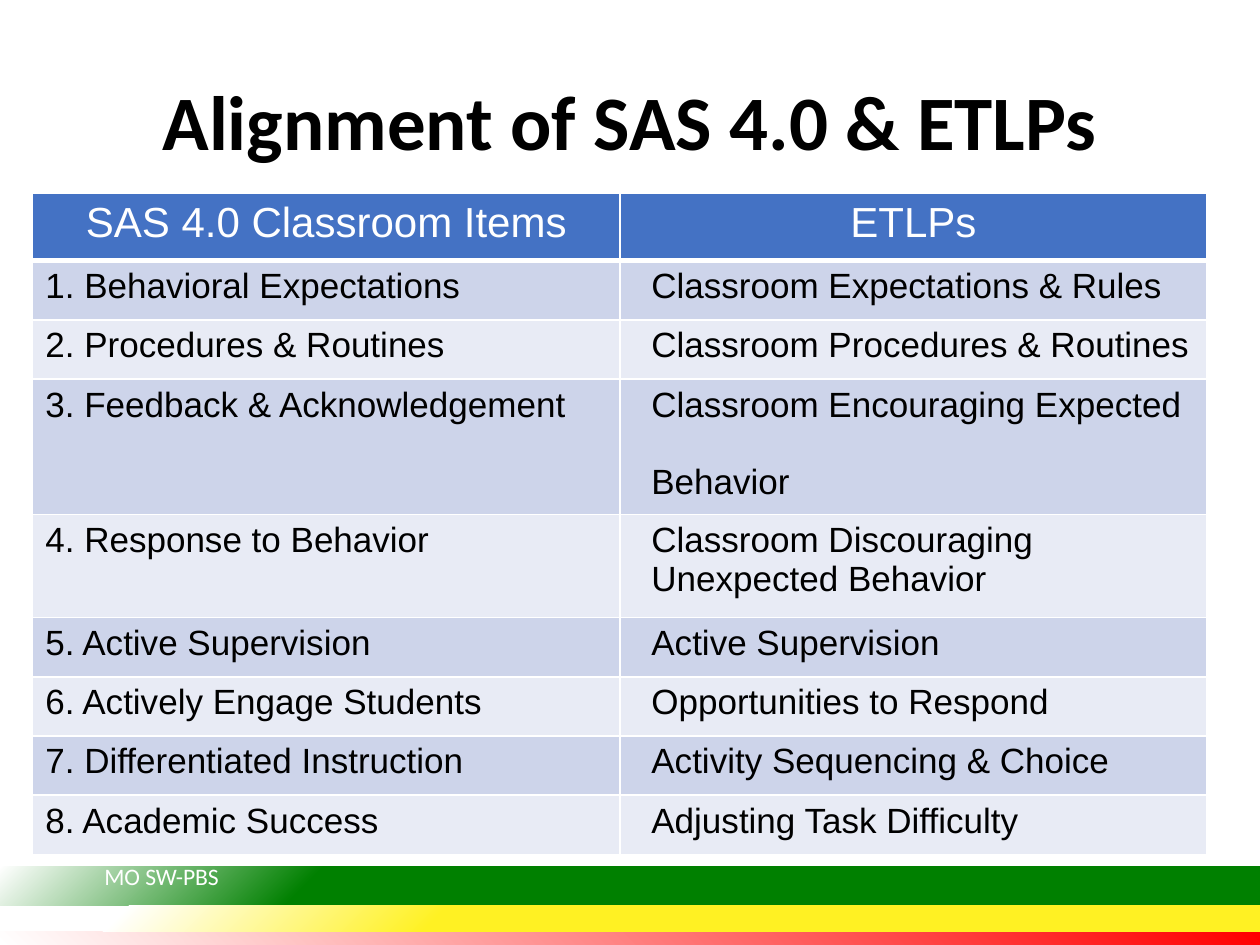
from lxml import etree
from pptx import Presentation
from pptx import util as u
from pptx.dml.color import RGBColor
from pptx.enum import shapes, text
from pptx.oxml import parse_xml
from pptx.oxml.ns import nsdecls, qn

WHITE, BLACK = "FFFFFF", "000000"
HEADER_FILL = "4472C4"
BAND_FILLS = ("CDD4EA", "E8EBF5")


def color(value):
    return RGBColor.from_string(value)


class SlideBuilder:
    heading_font = "Calibri"
    table_font = "Arial"

    def __init__(self, slide):
        self.slide = slide

    def style(self, paragraph, name, size, value, bold=False):
        font = paragraph.font
        font.name, font.size, font.bold = name, u.Pt(size), bold
        font.color.rgb = color(value)

    def title(self, words, left, top, width, height):
        shape = self.slide.shapes.title
        shape.left, shape.top = u.Inches(left), u.Inches(top)
        shape.width, shape.height = u.Inches(width), u.Inches(height)
        shape.text_frame.text = words
        shape.text_frame.vertical_anchor = text.MSO_ANCHOR.MIDDLE
        paragraph = shape.text_frame.paragraphs[0]
        paragraph.alignment = text.PP_ALIGN.CENTER
        paragraph.line_spacing = 0.9
        self.style(paragraph, self.heading_font, 44, BLACK, bold=True)

    def band(self, top, height, stops, focus):
        """Full-width strip with a circular gradient growing from one corner."""
        shape = self.slide.shapes.add_shape(
            shapes.MSO_SHAPE.RECTANGLE, 0, u.Inches(top), u.Inches(10), u.Inches(height))
        shape.shadow.inherit = False
        shape.line.fill.background()
        stop_xml = "".join(
            f'<a:gs pos="{position * 1000}"><a:srgbClr val="{value}"/></a:gs>'
            for position, value in stops)
        gradient = parse_xml(
            f'<a:gradFill {nsdecls("a")} rotWithShape="1"><a:gsLst>{stop_xml}</a:gsLst>'
            f'<a:path path="circle"><a:fillToRect {focus}/></a:path></a:gradFill>')
        shape.element.spPr.find(qn("a:prstGeom")).addnext(gradient)

    def label(self, words, left, top, width, height):
        shape = self.slide.shapes.add_textbox(
            u.Inches(left), u.Inches(top), u.Inches(width), u.Inches(height))
        shape.text_frame.word_wrap = True
        shape.text_frame.text = words
        self.style(shape.text_frame.paragraphs[0], self.heading_font, 13.5, WHITE)

    def borders(self, cell, top, bottom):
        properties = cell._tc.get_or_add_tcPr()
        for side, width in (("L", 1), ("R", 1), ("T", top), ("B", bottom)):
            line = etree.SubElement(properties, qn(f"a:ln{side}"), w=str(u.Pt(width)))
            fill = etree.SubElement(line, qn("a:solidFill"))
            etree.SubElement(fill, qn("a:srgbClr"), val=WHITE)

    def table(self, rows, heights, column_width, left, top):
        table = self.slide.shapes.add_table(
            len(rows), 2, u.Inches(left), u.Inches(top),
            u.Inches(2 * column_width), u.Inches(sum(heights))).table
        for column in table.columns:
            column.width = u.Inches(column_width)
        for i, (row, height) in enumerate(zip(rows, heights)):
            table.rows[i].height = u.Inches(height)
            for j, words in enumerate(row):
                self.cell(table.cell(i, j), words, i, indented=i > 0 and j == 1)
        return table

    def cell(self, cell, words, row, indented):
        header = row == 0
        self.borders(cell, top=3 if row == 1 else 1, bottom=3 if header else 1)
        cell.fill.solid()
        cell.fill.fore_color.rgb = color(HEADER_FILL if header else BAND_FILLS[(row - 1) % 2])
        if indented:
            cell.margin_left = u.Inches(0.25)
        cell.text_frame.text = words
        for paragraph in cell.text_frame.paragraphs:
            if header:
                paragraph.alignment = text.PP_ALIGN.CENTER
            self.style(paragraph, self.table_font, 24 if header else 20,
                       WHITE if header else BLACK)


def main():
    presentation = Presentation()
    presentation.slide_width, presentation.slide_height = u.Inches(10), u.Inches(7.5)
    builder = SlideBuilder(presentation.slides.add_slide(presentation.slide_layouts[5]))

    # Footer bands
    top_right, bottom_right = 'l="100000" b="100000"', 'l="100000" t="100000"'
    builder.band(7.39, 0.12, [(0, "FF0000"), (100, WHITE)], top_right)
    builder.band(6.88, 0.31, [(0, "008000"), (75, "008000"), (100, WHITE)], bottom_right)
    builder.band(7.19, 0.2, [(0, "FFF123"), (65, "FFF123"), (90, WHITE), (100, WHITE)],
                 bottom_right)
    builder.label("MO SW-PBS", 0.73, 6.79, 1.92, 0.33)

    # Title
    builder.title("Alignment of SAS 4.0 & ETLPs", 0.69, 0.27, 8.62, 1.45)

    # Alignment table
    rows = [
        ("SAS 4.0 Classroom Items", "ETLPs"),
        ("1. Behavioral Expectations", "Classroom Expectations & Rules"),
        ("2. Procedures & Routines", "Classroom Procedures & Routines"),
        ("3. Feedback & Acknowledgement", "Classroom Encouraging Expected\nBehavior"),
        ("4. Response to Behavior", "Classroom Discouraging\nUnexpected Behavior"),
        ("5. Active Supervision", "Active Supervision"),
        ("6. Actively Engage Students", "Opportunities to Respond"),
        ("7. Differentiated Instruction", "Activity Sequencing & Choice"),
        ("8. Academic Success", "Adjusting Task Difficulty"),
    ]
    heights = [0.54, 0.47, 0.47, 1.03, 0.82] + [0.47] * 4
    table = builder.table(rows, heights, 4.66, 0.26, 1.53)
    table.cell(3, 1).text_frame.paragraphs[1].space_before = u.Pt(22)

    presentation.save("out.pptx")


if __name__ == "__main__":
    main()
